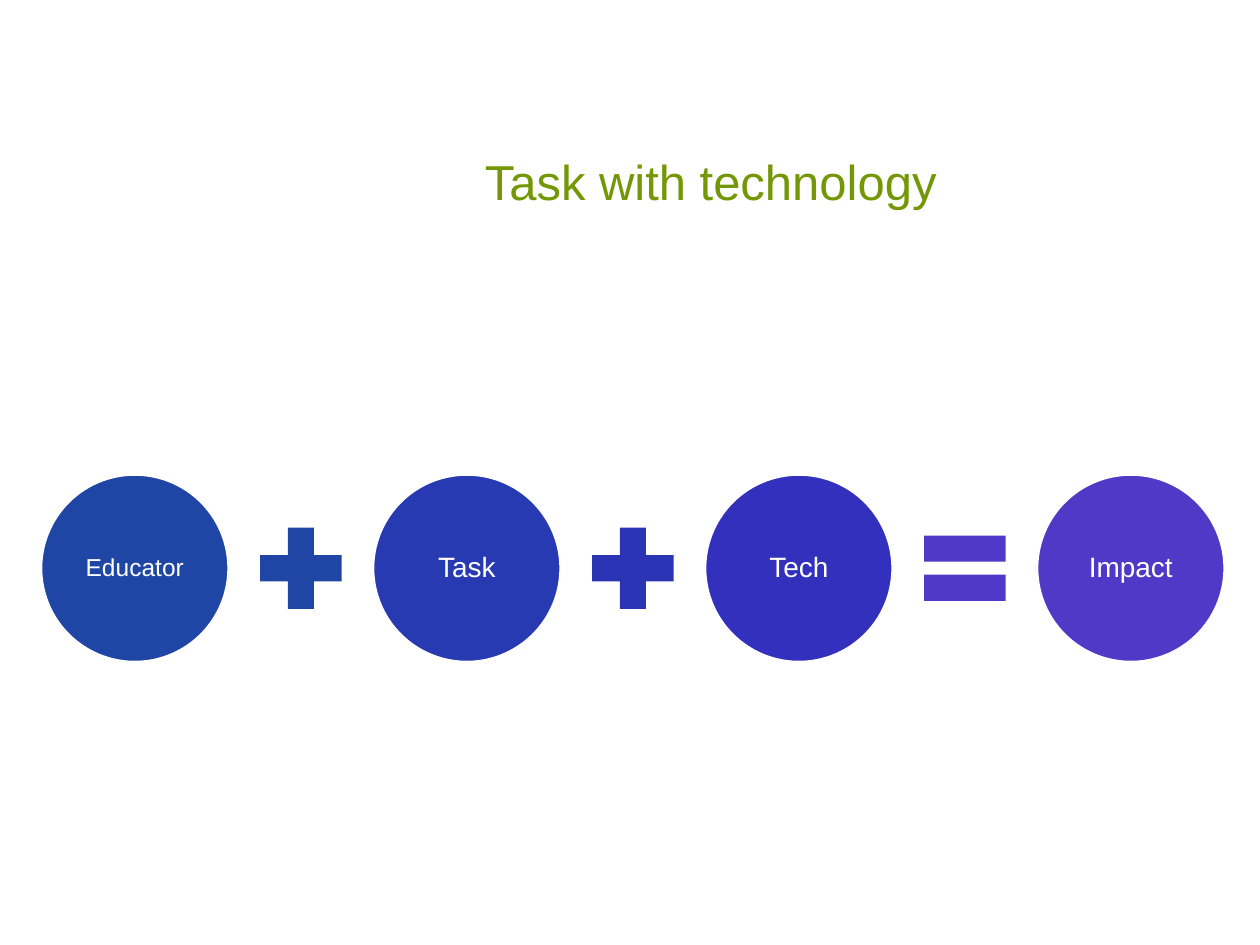
"""Build a slide that shows an equation of circles: educator, task, tech, impact."""
from pptx import Presentation
from pptx import util as u
from pptx.dml.color import RGBColor
from pptx.enum import shapes, text


def paint(part, tint):
    part.fill.solid()
    part.fill.fore_color.rgb = RGBColor.from_string(tint)


def write(frame, words, size, tint, form):
    for key, val in form.items():
        setattr(frame, key, val)
    para = frame.paragraphs[0]
    run = para.add_run()
    run.text = words
    for key, val in {"name": "Arial", "size": u.Pt(size)}.items():
        setattr(run.font, key, val)
    paint(run.font, tint)
    return para


deck = Presentation()
deck.slide_width, deck.slide_height = u.Inches(10), u.Inches(7.5)
slide = deck.slides.add_slide(deck.slide_layouts[6])
kind = shapes.MSO_SHAPE
white = "FFFFFF"

title = slide.shapes.add_textbox(*map(u.Inches, (3.75, 0.75, 5.41, 0.97)))
write(title.text_frame, "Task with technology", 28, "749805",
      {"word_wrap": True, "vertical_anchor": text.MSO_ANCHOR.BOTTOM})

left, mid, step = 1.07, 4.51, 2.635
disc, sign = 1.51, 0.88
pad = u.Inches(0.02)
inner = {"margin_left": pad, "margin_right": pad, "margin_top": pad,
         "margin_bottom": pad, "word_wrap": True,
         "vertical_anchor": text.MSO_ANCHOR.MIDDLE}
terms = [("Educator", 14, "2046A5"), ("Task", 16, "283AB1"),
         ("Tech", 16, "3230BC"), ("Impact", 16, "5039C6")]
signs = [(kind.MATH_PLUS, "2046A5"), (kind.MATH_PLUS, "2C34B6"),
         (kind.MATH_EQUAL, "5039C6")]

for col, (word, size, tint) in enumerate(terms):
    box = (left + col * step - disc / 2, mid - disc / 2, disc, disc)
    ball = slide.shapes.add_shape(kind.OVAL, *map(u.Inches, box))
    ball.shadow.inherit = False
    paint(ball, tint)
    paint(ball.line, white)
    ball.line.width = u.Pt(3)
    para = write(ball.text_frame, word, size, white, inner)
    para.alignment = text.PP_ALIGN.CENTER
    para.line_spacing = 0.9

for col, (form, tint) in enumerate(signs):
    box = (left + (col + 0.5) * step - sign / 2, mid - sign / 2, sign, sign)
    mark = slide.shapes.add_shape(form, *map(u.Inches, box))
    mark.shadow.inherit = False
    paint(mark, tint)
    mark.line.fill.background()

deck.save("out.pptx")
